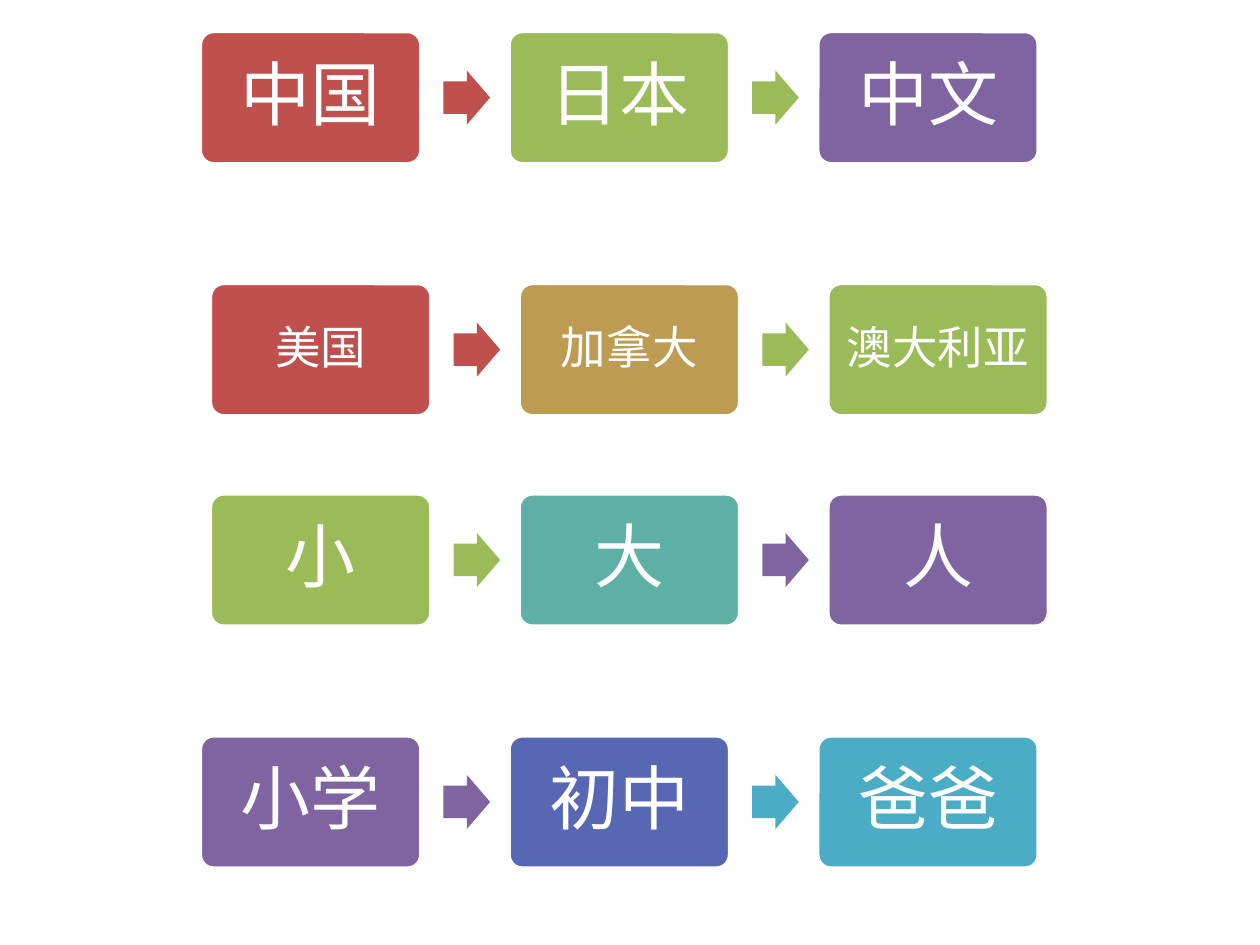
"""Build a slide with four rows of Chinese word cards linked by arrows."""
from pptx import Presentation
from pptx.dml.color import RGBColor
from pptx.enum.shapes import MSO_SHAPE
from pptx.enum.text import MSO_ANCHOR, PP_ALIGN
from pptx.util import Inches, Pt

RED, GREEN, PURPLE, AQUA = "C0504D", "9BBB59", "8064A2", "4BACC6"
GOLD, TEAL, BLUE, WHITE = "BD9B53", "5EAFA6", "5767B4", "FFFFFF"
PITCH = 2.45


def color(hex_code):
    return RGBColor.from_string(hex_code)


def add_filled(row, preset, left, top, width, height, fill, adjustments):
    piece = row.shapes.add_shape(
        preset, Inches(left), Inches(top), Inches(width), Inches(height))
    for index, value in enumerate(adjustments):
        piece.adjustments[index] = value
    piece.shadow.inherit = False
    piece.fill.solid()
    piece.fill.fore_color.rgb = color(fill)
    return piece


word_rows = [
    (1.59, 0.25, 40, 0.17, ["中国", "日本", "中文"], [RED, GREEN, PURPLE], [RED, GREEN]),
    (1.67, 2.25, 26, 0.11, ["美国", "加拿大", "澳大利亚"], [RED, GOLD, GREEN], [RED, GREEN]),
    (1.67, 3.92, 40, 0.17, ["小", "大", "人"], [GREEN, TEAL, PURPLE], [GREEN, PURPLE]),
    (1.59, 5.84, 40, 0.17, ["小学", "初中", "爸爸"], [PURPLE, BLUE, AQUA], [PURPLE, AQUA]),
]

deck = Presentation()
deck.slide_width = Inches(10)
deck.slide_height = Inches(7.5)
slide = deck.slides.add_slide(deck.slide_layouts[6])

for left, top, size, inset, words, card_fills, arrow_fills in word_rows:
    row = slide.shapes.add_group_shape()
    for column, (word, fill) in enumerate(zip(words, card_fills)):
        card = add_filled(row, MSO_SHAPE.ROUNDED_RECTANGLE, left + column * PITCH,
                          top, 1.75, 1.05, fill, [0.1])
        card.line.color.rgb = color(WHITE)
        card.line.width = Pt(2)
        frame = card.text_frame
        frame.word_wrap = True
        frame.vertical_anchor = MSO_ANCHOR.MIDDLE
        frame.margin_left = frame.margin_right = Inches(inset)
        frame.margin_top = frame.margin_bottom = Inches(inset)
        paragraph = frame.paragraphs[0]
        paragraph.alignment = PP_ALIGN.CENTER
        paragraph.line_spacing = 0.9
        paragraph.space_after = Pt(size * 0.35)
        run = paragraph.add_run()
        run.text = word
        run.font.name = "Calibri"
        run.font.size = Pt(size)
        run.font.color.rgb = color(WHITE)
    for column, fill in enumerate(arrow_fills):
        arrow = add_filled(row, MSO_SHAPE.RIGHT_ARROW, left + 1.93 + column * PITCH,
                           top + 0.31, 0.37, 0.43, fill, [0.6, 0.5])
        arrow.line.fill.background()

deck.save("out.pptx")
